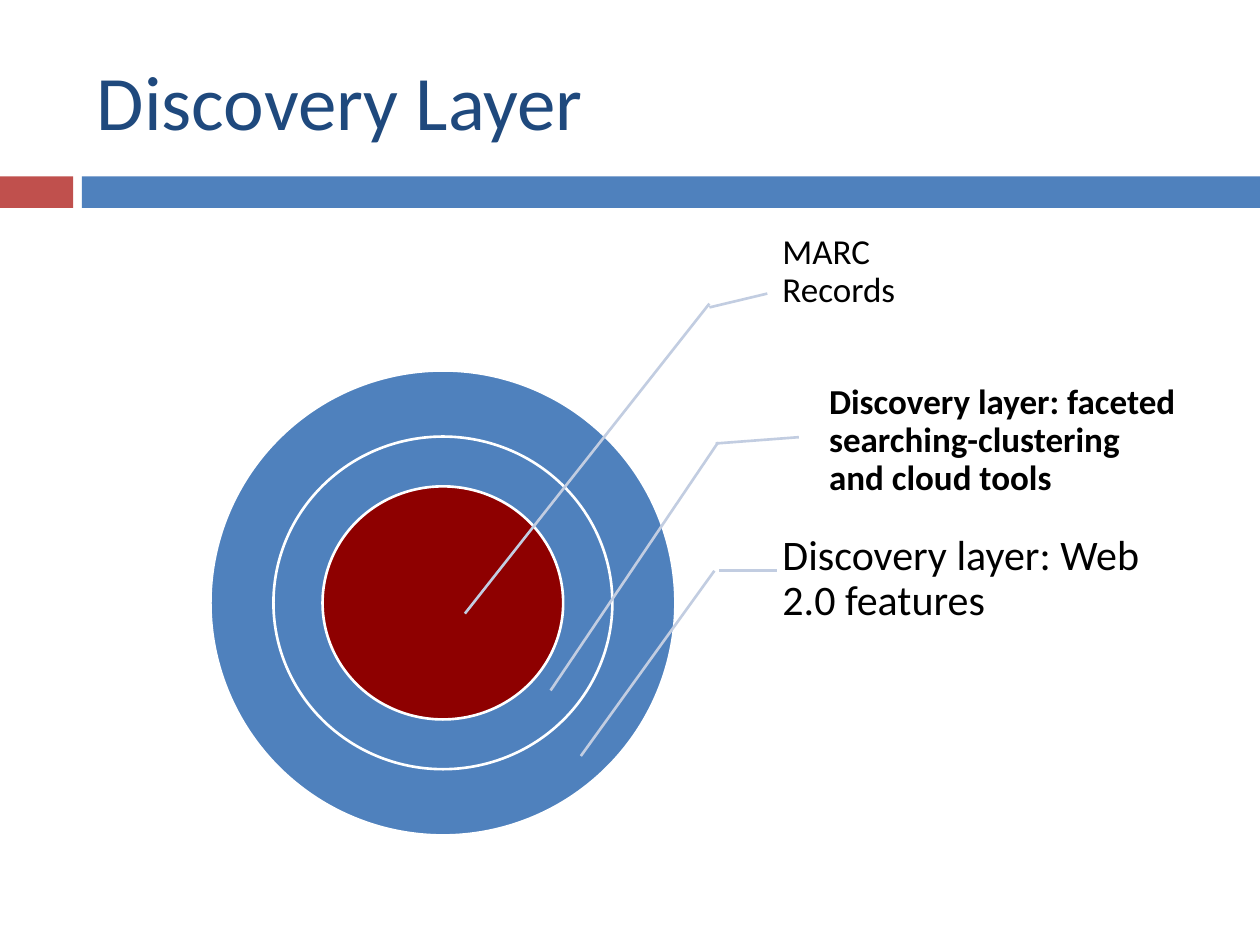
from dataclasses import dataclass

from lxml import etree
from pptx import Presentation
from pptx.dml.color import RGBColor
from pptx.enum.shapes import MSO_CONNECTOR, MSO_SHAPE
from pptx.enum.text import MSO_ANCHOR
from pptx.oxml.ns import qn
from pptx.util import Inches, Pt

STRAIGHT = MSO_CONNECTOR.STRAIGHT
OVAL, RECTANGLE = MSO_SHAPE.OVAL, MSO_SHAPE.RECTANGLE
MIDDLE, TOP = MSO_ANCHOR.MIDDLE, MSO_ANCHOR.TOP

WIDTH, HEIGHT = 10, 7.5
COLUMNS, ROWS = 100, 75


@dataclass(frozen=True)
class Theme:
    font: str = "Calibri"
    title: str = "1F497D"
    text: str = "000000"
    blue: str = "4F81BD"
    red: str = "C0504D"
    core: str = "8E0000"
    outline: str = "FFFFFF"
    leader: str = "C2CDE1"
    title_size: int = 44
    label_size: int = 20
    large_label_size: int = 24
    line_width: float = 1.5


class SlideBuilder:
    """Draws on one slide; lengths are columns and rows of the grid."""

    def __init__(self, slide, theme):
        self.shapes = slide.shapes
        self.theme = theme

    @staticmethod
    def x(columns):
        return Inches(columns * WIDTH / COLUMNS)

    @staticmethod
    def y(rows):
        return Inches(rows * HEIGHT / ROWS)

    def box(self, left, top, width, height):
        return self.x(left), self.y(top), self.x(width), self.y(height)

    def shape(self, kind, area, fill, outline=None):
        shape = self.shapes.add_shape(kind, *self.box(*area))
        shape.shadow.inherit = False
        shape.fill.solid()
        shape.fill.fore_color.rgb = RGBColor.from_string(fill)
        if outline:
            shape.line.color.rgb = RGBColor.from_string(outline)
            shape.line.width = Pt(self.theme.line_width)
        else:
            shape.line.fill.background()

    def ring(self, center, width, height, fill):
        area = (center[0] - width / 2, center[1] - height / 2, width, height)
        self.shape(OVAL, area, fill, self.theme.outline)

    def text(self, area, words, size, color, bold=False, anchor=MIDDLE,
             insets=(1, 0.5, 1, 0.5), spacing=1.0):
        """Insets run left, top, right, bottom."""
        frame = self.shapes.add_textbox(*self.box(*area)).text_frame
        frame.word_wrap = True
        frame.vertical_anchor = anchor
        left, top, right, bottom = insets
        frame.margin_left, frame.margin_right = self.x(left), self.x(right)
        frame.margin_top, frame.margin_bottom = self.y(top), self.y(bottom)
        paragraph = frame.paragraphs[0]
        paragraph.line_spacing = spacing
        run = paragraph.add_run()
        run.text = words
        run.font.name = self.theme.font
        run.font.size = Pt(size)
        run.font.bold = bold
        run.font.color.rgb = RGBColor.from_string(color)

    def leader(self, start, end):
        line = self.shapes.add_connector(
            STRAIGHT, self.x(start[0]), self.y(start[1]), self.x(end[0]), self.y(end[1]))
        line.line.color.rgb = RGBColor.from_string(self.theme.leader)
        line.line.width = Pt(self.theme.line_width)
        etree.SubElement(line._element.spPr, qn("a:effectLst"))

    def callout(self, area, words, size, stub, pointer, indent=1.6, top_inset=0.3, **style):
        """A label with a short stub beside it and a pointer into a ring."""
        self.text(area, words, size, self.theme.text,
                  insets=(indent, top_inset, 0.3, 0.3), spacing=0.9, **style)
        self.leader(*stub)
        self.leader(*pointer)


def main():
    presentation = Presentation()
    presentation.slide_width, presentation.slide_height = Inches(WIDTH), Inches(HEIGHT)
    slide = presentation.slides.add_slide(presentation.slide_layouts[6])
    theme = Theme()
    builder = SlideBuilder(slide, theme)

    builder.shape(RECTANGLE, (0, 14, 5.8, 2.5), theme.red)
    builder.shape(RECTANGLE, (6.5, 14, 93.5, 2.5), theme.blue)
    builder.text((6.7, 2.5, 89.2, 10.8), "Discovery Layer", theme.title_size, theme.title)

    center = (35.15, 47.85)
    for width, height, fill in ((36.9, 36.9, theme.blue),
                                (26.9, 26.4, theme.blue),
                                (19.1, 18.5, theme.core)):
        builder.ring(center, width, height, fill)

    builder.callout((60.5, 18.6, 15.5, 9.4), "MARC Records", theme.label_size,
                    stub=((56.3, 24.4), (60.9, 23.3)),
                    pointer=((56.3, 24.1), (36.9, 48.7)),
                    anchor=TOP, top_inset=0)
    builder.callout((64.2, 29.6, 29.5, 10.8),
                    "Discovery layer: faceted searching-clustering and cloud tools",
                    theme.label_size,
                    stub=((56.8, 35.2), (63.4, 34.7)),
                    pointer=((57, 35.1), (43.7, 54.8)), bold=True)
    builder.callout((60.2, 41.9, 33.8, 8.2), "Discovery layer: Web 2.0 features",
                    theme.large_label_size,
                    stub=((57.1, 45.3), (61.7, 45.3)),
                    pointer=((56.7, 45.3), (46.1, 60)), indent=1.9)

    presentation.save("out.pptx")


if __name__ == "__main__":
    main()
